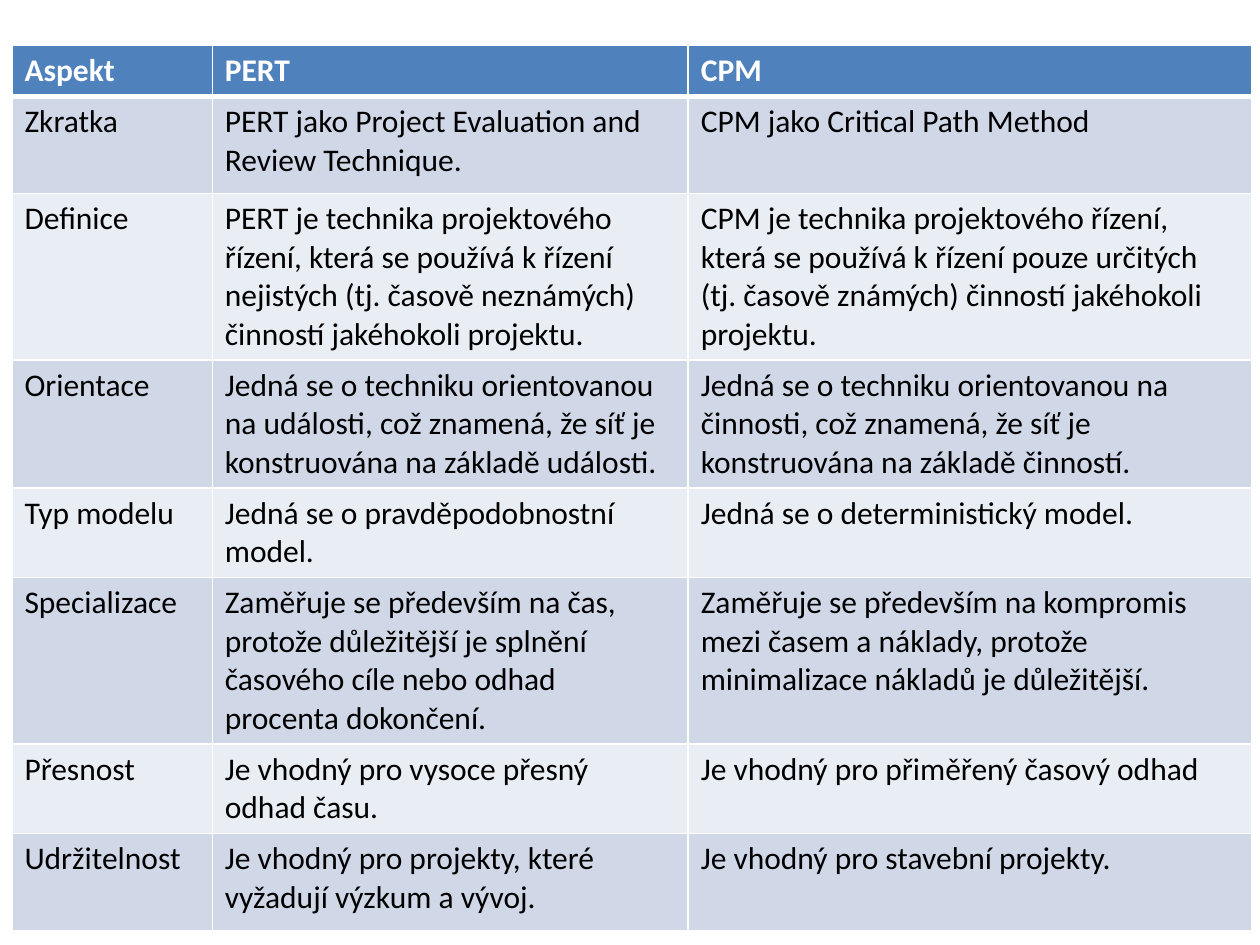
"""Build a slide with a table comparing the PERT and CPM methods."""
from lxml import etree
from pptx import Presentation
from pptx.dml.color import RGBColor
from pptx.oxml import ns
from pptx.util import Pt

COLORS = {"header": "4F81BD", "odd": "D0D8E8", "even": "E9EDF4",
          "white": "FFFFFF", "black": "000000"}
WIDTHS = [114.5, 272, 322]
ROWS = [
    (28, "Aspekt", "PERT", "CPM"),
    (55.4, "Zkratka",
     "PERT jako Project Evaluation and Review Technique.",
     "CPM jako Critical Path Method"),
    (93.6, "Definice",
     "PERT je technika projektového řízení, která se používá k řízení "
     "nejistých (tj. časově neznámých) činností jakéhokoli projektu.",
     "CPM je technika projektového řízení, která se používá k řízení pouze "
     "určitých (tj. časově známých) činností jakéhokoli projektu."),
    (70, "Orientace",
     "Jedná se o techniku orientovanou na události, což znamená, že síť je "
     "konstruována na základě události.",
     "Jedná se o techniku orientovanou na činnosti, což znamená, že síť je "
     "konstruována na základě činností."),
    (49, "Typ modelu",
     "Jedná se o pravděpodobnostní model.",
     "Jedná se o deterministický model."),
    (91.4, "Specializace",
     "Zaměřuje se především na čas, protože důležitější je splnění časového "
     "cíle nebo odhad procenta dokončení.",
     "Zaměřuje se především na kompromis mezi časem a náklady, protože "
     "minimalizace nákladů je důležitější."),
    (49.7, "Přesnost",
     "Je vhodný pro vysoce přesný odhad času.",
     "Je vhodný pro přiměřený časový odhad"),
    (55.4, "Udržitelnost",
     "Je vhodný pro projekty, které vyžadují výzkum a vývoj.",
     "Je vhodný pro stavební projekty."),
]


def add_border(cell, side, width):
    ln = etree.SubElement(cell._tc.get_or_add_tcPr(), ns.qn(f"a:ln{side}"),
                          w=str(Pt(width)))
    fill = etree.SubElement(ln, ns.qn("a:solidFill"))
    etree.SubElement(fill, ns.qn("a:srgbClr"), val=COLORS["white"])


prs = Presentation()
prs.slide_width, prs.slide_height = Pt(720), Pt(540)
s = prs.slides.add_slide(prs.slide_layouts[6])

height = sum(row[0] for row in ROWS)
table = s.shapes.add_table(len(ROWS), len(WIDTHS), Pt(6.8), Pt(26),
                           Pt(sum(WIDTHS)), Pt(height)).table
for column, width in zip(table.columns, WIDTHS):
    column.width = Pt(width)

for i, (row_height, *texts) in enumerate(ROWS):
    table.rows[i].height = Pt(row_height)
    header = i == 0
    band = "header" if header else "odd" if i % 2 else "even"
    ink = "white" if header else "black"
    for j, words in enumerate(texts):
        cell = table.cell(i, j)
        borders = {"L": 1, "R": 1, "T": 3 if i == 1 else 1, "B": 3 if header else 1}
        for side, width in borders.items():
            add_border(cell, side, width)
        cell.fill.solid()
        cell.fill.fore_color.rgb = RGBColor.from_string(COLORS[band])
        r = cell.text_frame.paragraphs[0].add_run()
        r.text = words
        for name, value in {"name": "Calibri", "size": Pt(18), "bold": header}.items():
            setattr(r.font, name, value)
        r.font.color.rgb = RGBColor.from_string(COLORS[ink])

prs.save("out.pptx")
